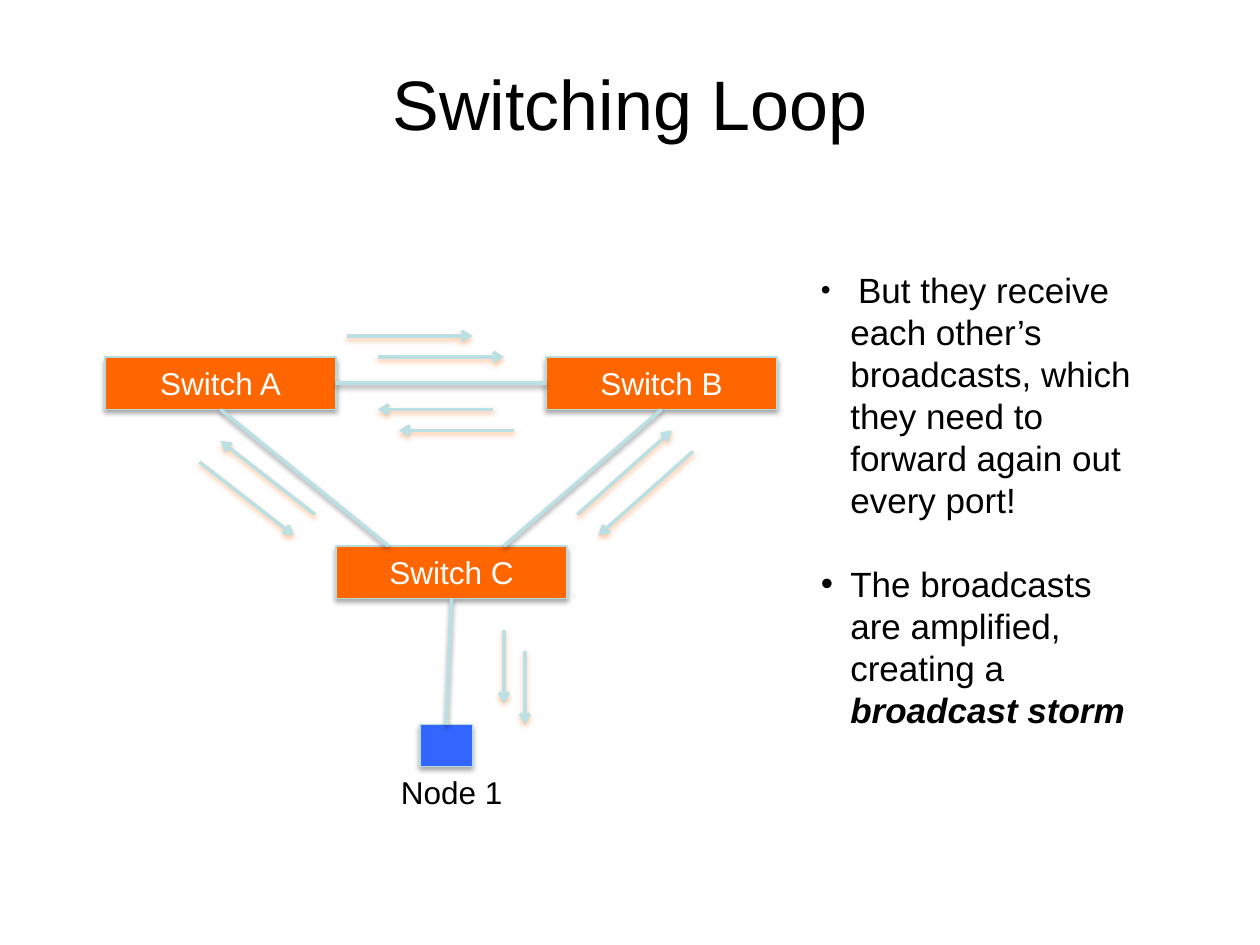
from lxml import etree
from pptx import Presentation
from pptx.dml.color import RGBColor
from pptx.enum.shapes import MSO_CONNECTOR, MSO_SHAPE
from pptx.enum.text import MSO_ANCHOR, PP_ALIGN
from pptx.oxml.ns import qn
from pptx.util import Emu, Pt

RECTANGLE = MSO_SHAPE.RECTANGLE
STRAIGHT = MSO_CONNECTOR.STRAIGHT
CENTER, LEFT = PP_ALIGN.CENTER, PP_ALIGN.LEFT
MIDDLE, TOP_ANCHOR = MSO_ANCHOR.MIDDLE, MSO_ANCHOR.TOP
TOP, SIDE_LEFT, BOTTOM, SIDE_RIGHT = range(4)

EMU_PER_PX = 7620
FONT = "Arial"
BLACK, WHITE = "000000", "FFFFFF"
ORANGE, BLUE = "FF6600", "3366FF"
PALE_LINE, PALE_EDGE = "BBE0E3", "B6DCDF"
SWITCH_SIZE = (220, 50)
BULLET_INDENT = 28

ARROWS = [
    (450, 170, 540, 90),
    (200, 170, 110, 100),
    (260, 20, 380, 20),
    (370, 70, 260, 70),
    (380, 280, 380, 350),
    (560, 110, 470, 190),
    (390, 90, 280, 90),
    (230, 0, 350, 0),
    (90, 120, 180, 190),
    (400, 300, 400, 370),
]


def px(*lengths):
    """Turn whole px lengths into EMU."""
    return [Emu(length * EMU_PER_PX) for length in lengths]


def rgb(value):
    """Turn a hex string into a colour."""
    return RGBColor.from_string(value)


def style_font(font, size, color=BLACK):
    """Set the typeface, size and colour of a font."""
    font.name, font.size = FONT, Pt(size)
    font.color.rgb = rgb(color)


def add_shadow(item, color, opacity, distance):
    """Give a shape or connector a soft shadow straight below it."""
    properties = item.element.spPr
    effects = properties.find(qn("a:effectLst"))
    if effects is None:
        effects = etree.SubElement(properties, qn("a:effectLst"))
    shadow = etree.SubElement(
        effects, qn("a:outerShdw"), blurRad=str(Pt(3.1)), dist=str(Pt(distance)),
        dir="5400000", rotWithShape="0")
    shade = etree.SubElement(shadow, qn("a:srgbClr"), val=color)
    etree.SubElement(shade, qn("a:alpha"), val=str(opacity * 1000))


def add_text(slide, box, text, size, align=LEFT, anchor=TOP_ANCHOR, wrap=True):
    """Place one line of text in a box."""
    frame = slide.shapes.add_textbox(*px(*box)).text_frame
    frame.word_wrap, frame.vertical_anchor = wrap, anchor
    paragraph = frame.paragraphs[0]
    paragraph.text, paragraph.alignment = text, align
    style_font(paragraph.font, size)


def add_block(slide, box, fill, label=""):
    """Draw a shadowed rectangle with an optional white label."""
    shape = slide.shapes.add_shape(RECTANGLE, *px(*box))
    shape.fill.solid()
    shape.fill.fore_color.rgb = rgb(fill)
    shape.line.color.rgb = rgb(PALE_EDGE)
    shape.line.width = Pt(0.75)
    shape.shadow.inherit = False
    add_shadow(shape, BLACK, 35, 1.8)
    if label:
        shape.text_frame.vertical_anchor = MIDDLE
        paragraph = shape.text_frame.paragraphs[0]
        paragraph.text, paragraph.alignment = label, CENTER
        style_font(paragraph.font, 18, WHITE)
    return shape


def add_line(slide, start, end, shadow_color=BLACK):
    """Draw a pale shadowed line between two points."""
    connector = slide.shapes.add_connector(STRAIGHT, *px(*start, *end))
    connector.line.color.rgb = rgb(PALE_LINE)
    connector.line.width = Pt(2)
    add_shadow(connector, shadow_color, 38, 1.6)
    return connector


def add_arrow(slide, start, end):
    """Draw a broadcast arrow with an orange glow."""
    connector = add_line(slide, start, end, ORANGE)
    outline = connector.element.spPr.find(qn("a:ln"))
    etree.SubElement(outline, qn("a:tailEnd"), type="arrow")


def add_network(slide, left, top):
    """Draw three looped switches, a node and the broadcast arrows."""
    def at(x, y):
        return left + x, top + y

    switch_a, switch_b, switch_c = [
        add_block(slide, (*at(x, y), *SWITCH_SIZE), ORANGE, f"Switch {letter}")
        for letter, x, y in (("A", 0, 20), ("B", 420, 20), ("C", 220, 200))]

    add_line(slide, at(270, 200), at(110, 70)).end_connect(switch_a, BOTTOM)
    add_line(slide, at(380, 200), at(530, 70)).end_connect(switch_b, BOTTOM)
    trunk = add_line(slide, at(220, 45), at(420, 45))
    trunk.begin_connect(switch_a, SIDE_RIGHT)
    trunk.end_connect(switch_b, SIDE_LEFT)

    node = add_block(slide, (*at(300, 370), 50, 40), BLUE)
    node_link = add_line(slide, at(325, 370), at(330, 250))
    node_link.begin_connect(node, TOP)
    node_link.end_connect(switch_c, BOTTOM)
    add_text(slide, (*at(270, 410), 122, 48), "Node 1", 18, wrap=False)

    for x1, y1, x2, y2 in ARROWS:
        add_arrow(slide, at(x1, y1), at(x2, y2))


def add_bullets(slide, box):
    """Place the two bulleted remarks."""
    frame = slide.shapes.add_textbox(*px(*box)).text_frame
    frame.word_wrap = True
    indent, = px(BULLET_INDENT)
    remarks = [
        (" ", "But they receive each other’s broadcasts, which they need to "
         "forward again out every port!"),
        ("The broadcasts are amplified, creating a ", "broadcast storm"),
    ]
    for index, texts in enumerate(remarks):
        paragraph = frame.add_paragraph() if index else frame.paragraphs[0]
        properties = paragraph._p.get_or_add_pPr()
        properties.set("marL", str(indent))
        properties.set("indent", str(-indent))
        etree.SubElement(properties, qn("a:buFont"), typeface=FONT)
        etree.SubElement(properties, qn("a:buChar"), char="•")
        paragraph.line_spacing = Pt(24)
        style_font(paragraph.font, 20)
        for text in texts:
            paragraph.add_run().text = text
    first, second = frame.paragraphs
    first.runs[0].font.size = Pt(16)
    second.space_before = Pt(24)
    storm = second.runs[1].font
    storm.bold = storm.italic = True


def main():
    """Build the slide and save it."""
    presentation = Presentation()
    presentation.slide_width, presentation.slide_height = px(1200, 900)
    slide = presentation.slides.add_slide(presentation.slide_layouts[6])
    add_text(slide, (60, 36, 1080, 124), "Switching Loop", 40, CENTER, MIDDLE)
    add_network(slide, 100, 320)
    add_bullets(slide, (770, 250, 330, 449))
    presentation.save("out.pptx")


if __name__ == "__main__":
    main()
